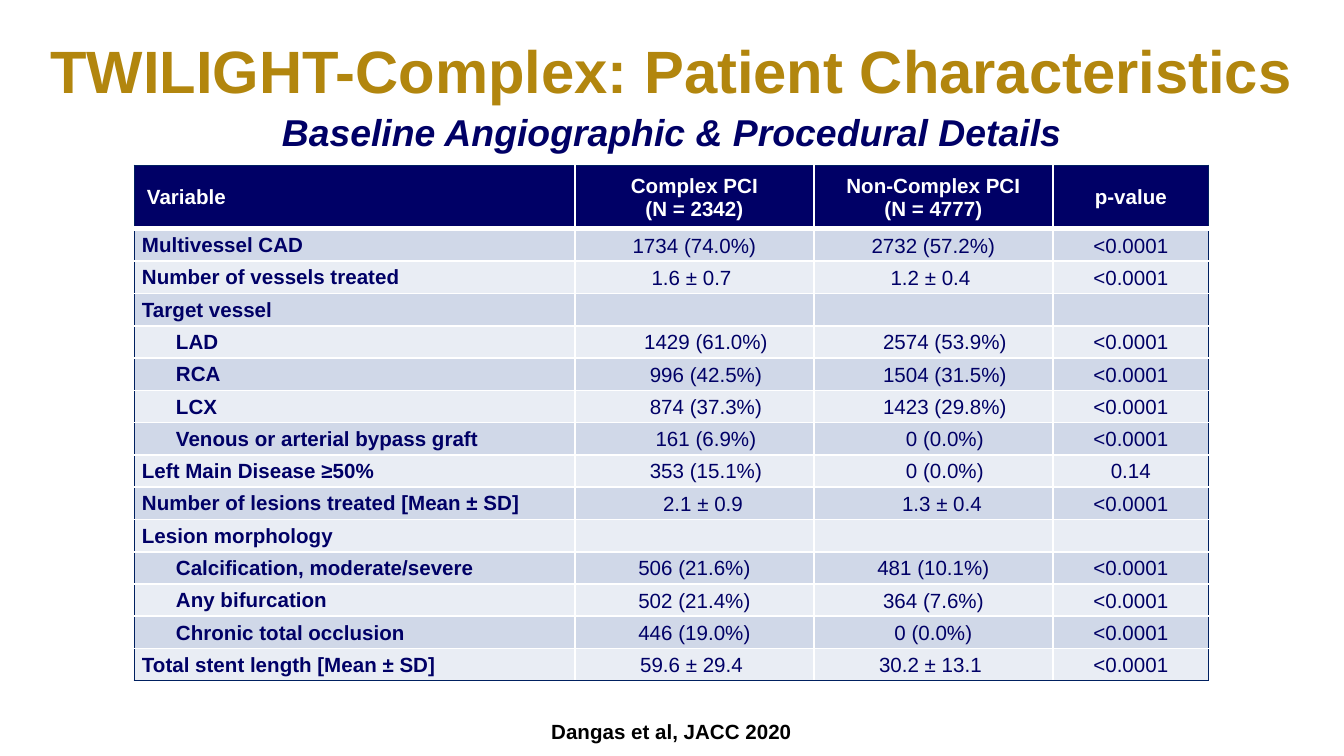
from lxml.etree import SubElement
from pptx import Presentation
from pptx.dml.color import RGBColor
from pptx.enum.text import MSO_ANCHOR as Anchor, MSO_AUTO_SIZE as AutoSize, PP_ALIGN as Align
from pptx.oxml.ns import qn
from pptx.util import Pt

EMU_PER_PX = 914400 / 134.4
NAVY, EDGE, WHITE, GOLD, BLACK = "000066", "002060", "FFFFFF", "B2860E", "000000"
BANDS = ("D0D8E8", "E9EDF4")
COLUMN_WIDTHS = (441, 239, 239, 156)
HEADER_HEIGHT, BODY_HEIGHT = 64, 452
LABEL_INDENT, VALUE_INDENT = 34, 23

HEADERS = ("Variable", "Complex PCI\n(N = 2342)", "Non-Complex PCI\n(N = 4777)", "p-value")
# label, complex PCI, non-complex PCI, p-value, label indent, value indent
ROWS = (
    ("Multivessel CAD", "1734 (74.0%)", "2732 (57.2%)", "<0.0001", 0, 0),
    ("Number of vessels treated", "1.6 ± 0.7 ", "1.2 ± 0.4 ", "<0.0001", 0, 0),
    ("Target vessel", "", "", "", 0, 0),
    ("LAD", "1429 (61.0%)", "2574 (53.9%)", "<0.0001", LABEL_INDENT, VALUE_INDENT),
    ("RCA", "996 (42.5%)", "1504 (31.5%)", "<0.0001", LABEL_INDENT, VALUE_INDENT),
    ("LCX", "874 (37.3%)", "1423 (29.8%)", "<0.0001", LABEL_INDENT, VALUE_INDENT),
    ("Venous or arterial bypass graft", "161 (6.9%)", "0 (0.0%)", "<0.0001",
     LABEL_INDENT, VALUE_INDENT),
    ("Left Main Disease ≥50%", "353 (15.1%)", "0 (0.0%)", "0.14", 0, VALUE_INDENT),
    ("Number of lesions treated [Mean ± SD]", "2.1 ± 0.9 ", "1.3 ± 0.4 ", "<0.0001",
     0, VALUE_INDENT),
    ("Lesion morphology", "", "", "", 0, 0),
    ("Calcification, moderate/severe", "506 (21.6%)", "481 (10.1%)", "<0.0001", LABEL_INDENT, 0),
    ("Any bifurcation", "502 (21.4%)", "364 (7.6%)", "<0.0001", LABEL_INDENT, 0),
    ("Chronic total occlusion", "446 (19.0%)", "0 (0.0%)", "<0.0001", LABEL_INDENT, 0),
    ("Total stent length [Mean ± SD]", "59.6 ± 29.4 ", "30.2 ± 13.1 ", "<0.0001", 0, 0),
)


def px(length):
    return round(length * EMU_PER_PX)


def rgb(color):
    return RGBColor.from_string(color)


def add_run(paragraph, text, size, color, bold=True, italic=False):
    run = paragraph.add_run()
    run.text = text
    font = run.font
    font.name, font.size, font.bold, font.italic = "Arial", Pt(size), bold, italic
    font.color.rgb = rgb(color)


def write_heading(shape, box, text, size, color, anchor=Anchor.TOP, italic=False):
    """Place a title or text box and give it one centred line."""
    shape.left, shape.top, shape.width, shape.height = map(px, box)
    frame = shape.text_frame
    frame.word_wrap, frame.auto_size, frame.vertical_anchor = True, AutoSize.NONE, anchor
    paragraph = frame.paragraphs[0]
    paragraph.alignment = Align.CENTER
    add_run(paragraph, text, size, color, italic=italic)


def set_borders(cell, row, column):
    """Rule cells in white, with a thin navy outline around the table."""
    outline, inner = (EDGE, 0.5), (WHITE, 1)
    below_header = (WHITE, 3)
    bottom = outline if row == len(ROWS) else below_header if row == 0 else inner
    borders = {
        "a:lnL": outline if column == 0 else inner,
        "a:lnR": outline if column == len(HEADERS) - 1 else inner,
        "a:lnT": outline if row == 0 else below_header if row == 1 else inner,
        "a:lnB": bottom,
    }
    properties = cell._tc.get_or_add_tcPr()
    for tag, (color, width) in borders.items():
        line = SubElement(properties, qn(tag), w=str(Pt(width)))
        SubElement(SubElement(line, qn("a:solidFill")), qn("a:srgbClr"), val=color)


def set_indent(paragraph, left=0, first_line=0):
    properties = paragraph._p.get_or_add_pPr()
    properties.set("marL", str(px(left)))
    properties.set("indent", str(px(first_line)))


def fill_cell(cell, row, column, text, color, fill, bold, margins):
    """Format one cell, write its lines and return its first paragraph."""
    set_borders(cell, row, column)
    cell.fill.solid()
    cell.fill.fore_color.rgb = rgb(fill)
    cell.vertical_anchor = Anchor.MIDDLE
    cell.margin_left, cell.margin_top, cell.margin_right, cell.margin_bottom = map(px, margins)
    frame = cell.text_frame
    for index, line in enumerate(text.split("\n")):
        paragraph = frame.add_paragraph() if index else frame.paragraphs[0]
        paragraph.alignment = Align.CENTER if column else Align.LEFT
        if line:
            add_run(paragraph, line, 11, color, bold)
        else:
            SubElement(paragraph._p, qn("a:endParaRPr"), sz="1100")
    return frame.paragraphs[0]


def add_characteristics_table(slide):
    table = slide.shapes.add_table(
        len(ROWS) + 1, len(HEADERS), px(134), px(165),
        px(sum(COLUMN_WIDTHS)), px(HEADER_HEIGHT + BODY_HEIGHT)).table
    table.horz_banding = False
    for column, width in zip(table.columns, COLUMN_WIDTHS):
        column.width = px(width)
    for index, row in enumerate(table.rows):
        row.height = px(BODY_HEIGHT / len(ROWS) if index else HEADER_HEIGHT)

    for column, header in enumerate(HEADERS):
        margins = (1, 1, 1, 0) if column else (13, 7, 13, 7)
        fill_cell(table.cell(0, column), 0, column, header, WHITE, NAVY, True, margins)
    for row, (*texts, label_indent, value_indent) in enumerate(ROWS, 1):
        for column, text in enumerate(texts):
            margins = (9, 0, 9, 0) if column else (8, 1, 1, 0)
            paragraph = fill_cell(table.cell(row, column), row, column, text, NAVY,
                                  BANDS[(row - 1) % 2], column == 0, margins)
            if column:
                paragraph.line_spacing = 1.07
            if column == 0:
                set_indent(paragraph, left=label_indent)
            elif column < 3:
                set_indent(paragraph, first_line=value_indent)


def main():
    deck = Presentation()
    deck.slide_width, deck.slide_height = px(1344), px(756)
    slide = deck.slides.add_slide(deck.slide_layouts[5])
    write_heading(slide.shapes.title, (-1, 27, 1346, 86),
                  "TWILIGHT-Complex: Patient Characteristics", 32, GOLD)
    write_heading(slide.shapes.add_textbox(0, 0, 0, 0), (48, 103, 1248, 59),
                  "Baseline Angiographic & Procedural Details", 20, NAVY, italic=True)
    add_characteristics_table(slide)
    write_heading(slide.shapes.add_textbox(0, 0, 0, 0), (427, 712, 489, 39),
                  "Dangas et al, JACC 2020", 11, BLACK, Anchor.MIDDLE)
    deck.save("out.pptx")


if __name__ == "__main__":
    main()
